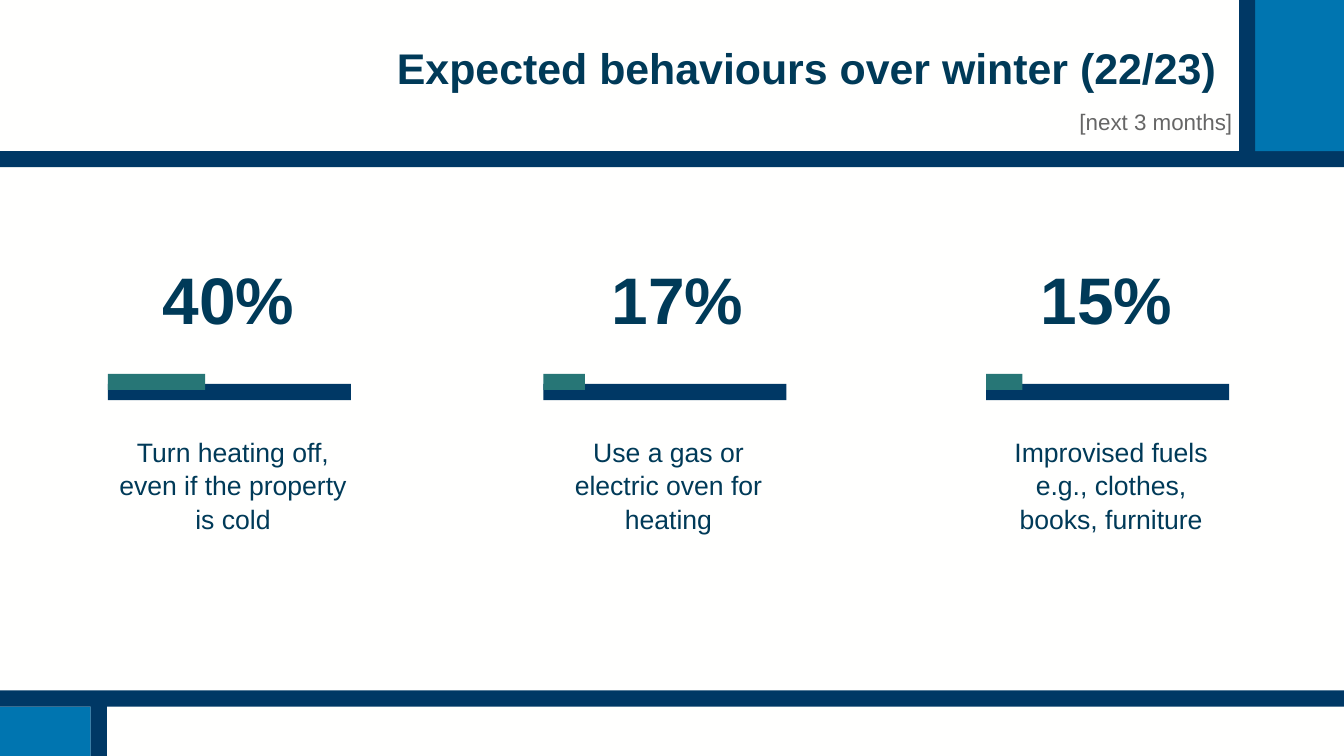
from pptx import Presentation
from pptx.dml.color import RGBColor
from pptx.enum import shapes, text
from pptx.util import Inches, Pt

COLOURS = {"paper": "FFFFFE", "navy": "003865", "blue": "0075B0",
           "teal": "277676", "ink": "003A58", "grey": "666666"}
TITLE = "Expected behaviours over winter (22/23)"
PERIOD = "[next 3 months]"
BEHAVIOURS = [
    {"left": 1.07, "share": 40, "number_box": (1.1, 2.33),
     "label": "Turn heating off, even if the property is cold"},
    {"left": 5.39, "share": 17, "number_box": (5.39, 2.66),
     "label": "Use a gas or electric oven for heating"},
    {"left": 9.78, "share": 15, "number_box": (9.81, 2.33),
     "label": "Improvised fuels e.g., clothes, books, furniture"},
]
FRAME = [
    ("blue", (-0.35, 7.01, 1.25, 0.67)),
    ("navy", (0.9, 6.98, 0.16, 0.73)),
    ("navy", (-0.35, 1.5, 14.2, 0.16)),
    ("navy", (-0.35, 6.85, 13.88, 0.16)),
    ("blue", (12.41, -0.04, 1.14, 1.54)),
    ("navy", (12.29, -0.19, 0.16, 1.84)),
]
BAR_WIDTH, BAR_HEIGHT = 2.41, 0.16
TRACK_TOP, SHARE_TOP = 3.81, 3.71


def rgb(name):
    """Return the named colour."""
    return RGBColor.from_string(COLOURS[name])


def add_block(s, colour, box):
    """Add a plain filled rectangle."""
    sp = s.shapes.add_shape(shapes.MSO_SHAPE.RECTANGLE, *map(Inches, box))
    sp.shadow.inherit = False
    sp.fill.solid()
    sp.fill.fore_color.rgb = rgb(colour)
    sp.line.fill.background()


def add_words(s, words, box, size, align, colour="ink", bold=False,
              spacing=0.9, anchor="MIDDLE", inset=0.05):
    """Add a text box holding one paragraph."""
    tf = s.shapes.add_textbox(*map(Inches, box)).text_frame
    tf.word_wrap = True
    tf.vertical_anchor = text.MSO_ANCHOR[anchor]
    tf.margin_top = tf.margin_bottom = Inches(inset)
    p = tf.paragraphs[0]
    p.alignment = text.PP_ALIGN[align]
    p.line_spacing = spacing
    r = p.add_run()
    r.text = words
    r.font.name = "Arial"
    r.font.size = Pt(size)
    r.font.bold = bold
    r.font.color.rgb = rgb(colour)


def main():
    """Build the slide and save it."""
    prs = Presentation()
    prs.slide_width, prs.slide_height = Inches(13.33), Inches(7.5)
    s = prs.slides.add_slide(prs.slide_layouts[6])
    s.background.fill.solid()
    s.background.fill.fore_color.rgb = rgb("paper")

    for colour, box in FRAME:
        add_block(s, colour, box)
    add_words(s, TITLE, (1.21, 0.53, 10.95, 0.35), 30.6, "RIGHT", bold=True)
    add_words(s, PERIOD, (9.61, 0.97, 2.71, 0.47), 16, "RIGHT", "grey",
              spacing=1.0, anchor="TOP", inset=0.1)

    for item in BEHAVIOURS:
        left, share = item["left"], item["share"]
        number_left, number_width = item["number_box"]
        add_words(s, f"{share}%", (number_left, 2.14, number_width, 1.73),
                  47, "CENTER", bold=True)
        add_block(s, "navy", (left, TRACK_TOP, BAR_WIDTH, BAR_HEIGHT))
        add_block(s, "teal",
                  (left, SHARE_TOP, BAR_WIDTH * share / 100, BAR_HEIGHT))
        add_words(s, item["label"], (left, 4.25, 2.48, 1.11), 19, "CENTER",
                  spacing=1.05)

    prs.save("out.pptx")


if __name__ == "__main__":
    main()
